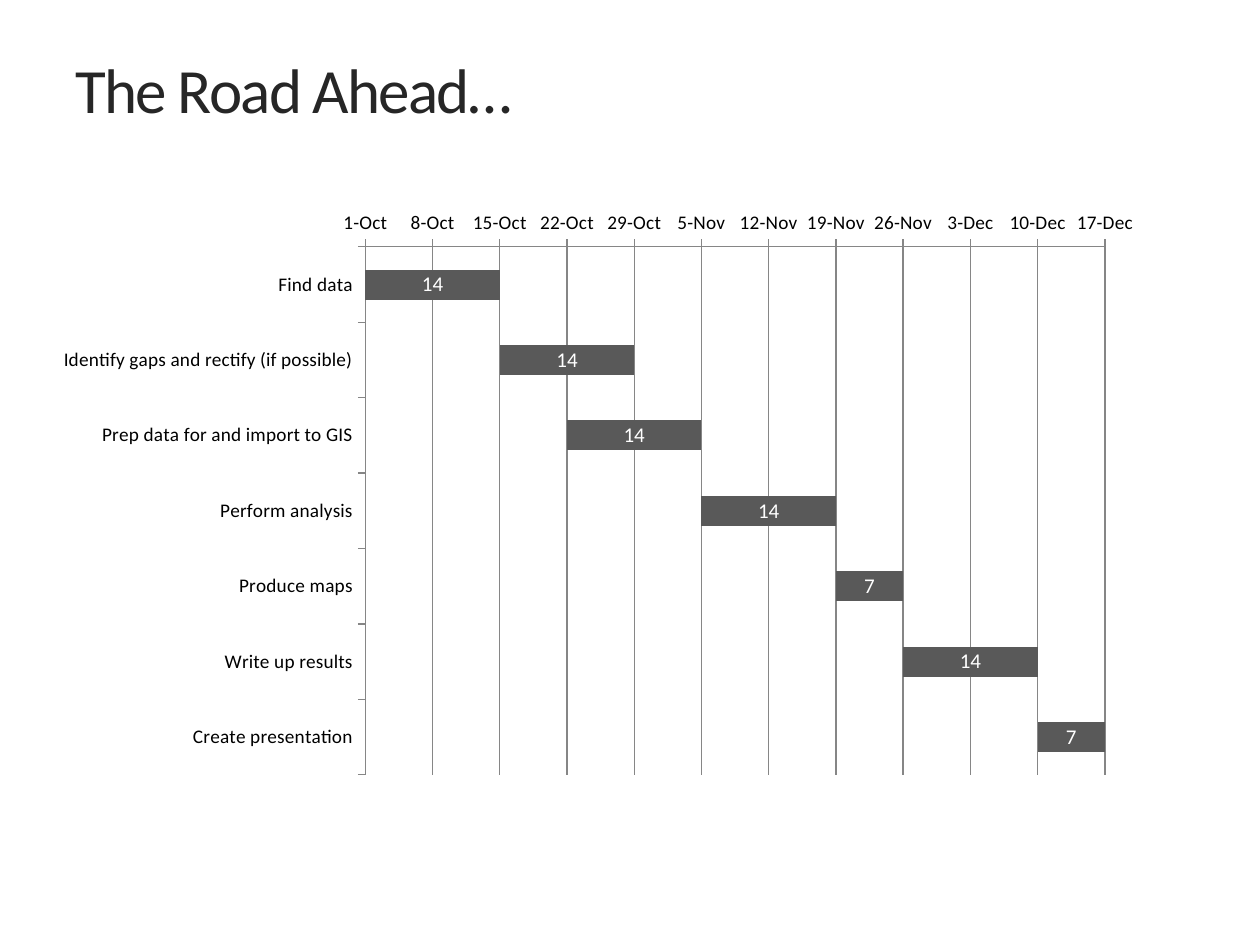
from dataclasses import dataclass

import lxml.etree
import pptx
import pptx.chart.data
import pptx.dml.color
import pptx.enum.chart
import pptx.enum.text
import pptx.oxml.ns
import pptx.util
from pptx.util import Inches


@dataclass(frozen=True)
class Theme:
    font: str = "Calibri"
    title_color: str = "262626"
    axis_text: str = "000000"
    axis_line: str = "868686"
    bar: str = "595959"
    bar_text: str = "FFFFFF"
    title_size: int = 36
    chart_size: int = 10
    axis_size: int = 11
    label_size: int = 12


THEME = Theme()
FIRST_DAY = 41548
LAST_DAY = 41625
WEEK = 7
CHART_BOX = (0.33, 1.58, 8.83, 4.67)
PLOT_BOX = (2.9, 1.96, 5.87, 4.19)
TASKS = [
    ("Find data", 0, 14),
    ("Identify gaps and rectify (if possible)", 14, 14),
    ("Prep data for and import to GIS", 21, 14),
    ("Perform analysis", 35, 14),
    ("Produce maps", 49, 7),
    ("Write up results", 56, 14),
    ("Create presentation", 70, 7),
]


def style_font(font, size, color):
    """Apply the theme typeface with a size and colour."""
    font.name = THEME.font
    font.size = pptx.util.Pt(size)
    font.bold = False
    font.color.rgb = pptx.dml.color.RGBColor.from_string(color)


def style_line(line):
    """Draw a thin axis or gridline."""
    line.color.rgb = pptx.dml.color.RGBColor.from_string(THEME.axis_line)
    line.width = pptx.util.Pt(0.75)


def add_title(slide, text):
    """Place and format the slide title."""
    title = slide.shapes.title
    title.left, title.top = Inches(0.5), Inches(0.08)
    title.width, title.height = Inches(8.33), Inches(1.25)
    frame = title.text_frame
    frame.text = text
    frame.word_wrap = True
    frame.auto_size = pptx.enum.text.MSO_AUTO_SIZE.NONE
    frame.vertical_anchor = pptx.enum.text.MSO_ANCHOR.MIDDLE
    paragraph = frame.paragraphs[0]
    paragraph.alignment = pptx.enum.text.PP_ALIGN.LEFT
    style_font(paragraph.font, THEME.title_size, THEME.title_color)
    paragraph.runs[0]._r.get_or_add_rPr().set("spc", "-100")


def style_axis(axis):
    """Give an axis its text, line and outward ticks."""
    style_font(axis.tick_labels.font, THEME.axis_size, THEME.axis_text)
    style_line(axis.format.line)
    axis.major_tick_mark = pptx.enum.chart.XL_TICK_MARK.OUTSIDE
    axis.minor_tick_mark = pptx.enum.chart.XL_TICK_MARK.NONE


def set_plot_area(chart):
    """Fix the inner plot area to its place on the slide."""
    qn = pptx.oxml.ns.qn
    plot_area = chart._chartSpace.find(qn("c:chart")).find(qn("c:plotArea"))
    for old_layout in plot_area.findall(qn("c:layout")):
        plot_area.remove(old_layout)
    layout = lxml.etree.Element(qn("c:layout"))
    manual = lxml.etree.SubElement(layout, qn("c:manualLayout"))
    left, top, width, height = CHART_BOX
    plot_left, plot_top, plot_width, plot_height = PLOT_BOX
    settings = {
        "layoutTarget": "inner",
        "xMode": "edge",
        "yMode": "edge",
        "x": (plot_left - left) / width,
        "y": (plot_top - top) / height,
        "w": plot_width / width,
        "h": plot_height / height,
    }
    for name, value in settings.items():
        lxml.etree.SubElement(manual, qn(f"c:{name}")).set("val", str(value))
    plot_area.insert(0, layout)


def style_series(plot):
    """Hide the start offsets and show labelled durations."""
    starts, durations = plot.series
    starts.format.fill.background()
    starts.format.line.fill.background()
    durations.format.fill.solid()
    durations.format.fill.fore_color.rgb = pptx.dml.color.RGBColor.from_string(THEME.bar)
    labels = durations.data_labels
    labels.show_value = True
    labels.position = pptx.enum.chart.XL_LABEL_POSITION.CENTER
    style_font(labels.font, THEME.label_size, THEME.bar_text)


def add_schedule(slide):
    """Add the Gantt chart as stacked bars on a date axis."""
    data = pptx.chart.data.CategoryChartData()
    data.categories = [name for name, _, _ in TASKS]
    data.add_series("Series 1", [FIRST_DAY + offset for _, offset, _ in TASKS])
    data.add_series("Series 2", [days for _, _, days in TASKS])
    chart = slide.shapes.add_chart(
        pptx.enum.chart.XL_CHART_TYPE.BAR_STACKED, *map(Inches, CHART_BOX), data
    ).chart
    chart.has_legend = False
    chart.has_title = False
    style_font(chart.font, THEME.chart_size, THEME.axis_text)
    plot = chart.plots[0]
    plot.gap_width = 150
    plot.overlap = 100
    plot.vary_by_categories = False
    style_series(plot)

    style_axis(chart.category_axis)
    chart.category_axis.reverse_order = True
    dates = chart.value_axis
    style_axis(dates)
    dates.minimum_scale = FIRST_DAY
    dates.maximum_scale = LAST_DAY
    dates.major_unit = WEEK
    dates.has_major_gridlines = True
    style_line(dates.major_gridlines.format.line)
    dates.tick_labels.number_format = "d\\-mmm"
    dates.tick_labels.number_format_is_linked = False
    set_plot_area(chart)


def main():
    """Build and save the schedule slide."""
    presentation = pptx.Presentation()
    presentation.slide_width = Inches(10)
    presentation.slide_height = Inches(7.5)
    slide = presentation.slides.add_slide(presentation.slide_layouts[5])
    add_title(slide, "The Road Ahead…")
    add_schedule(slide)
    presentation.save("out.pptx")


if __name__ == "__main__":
    main()
